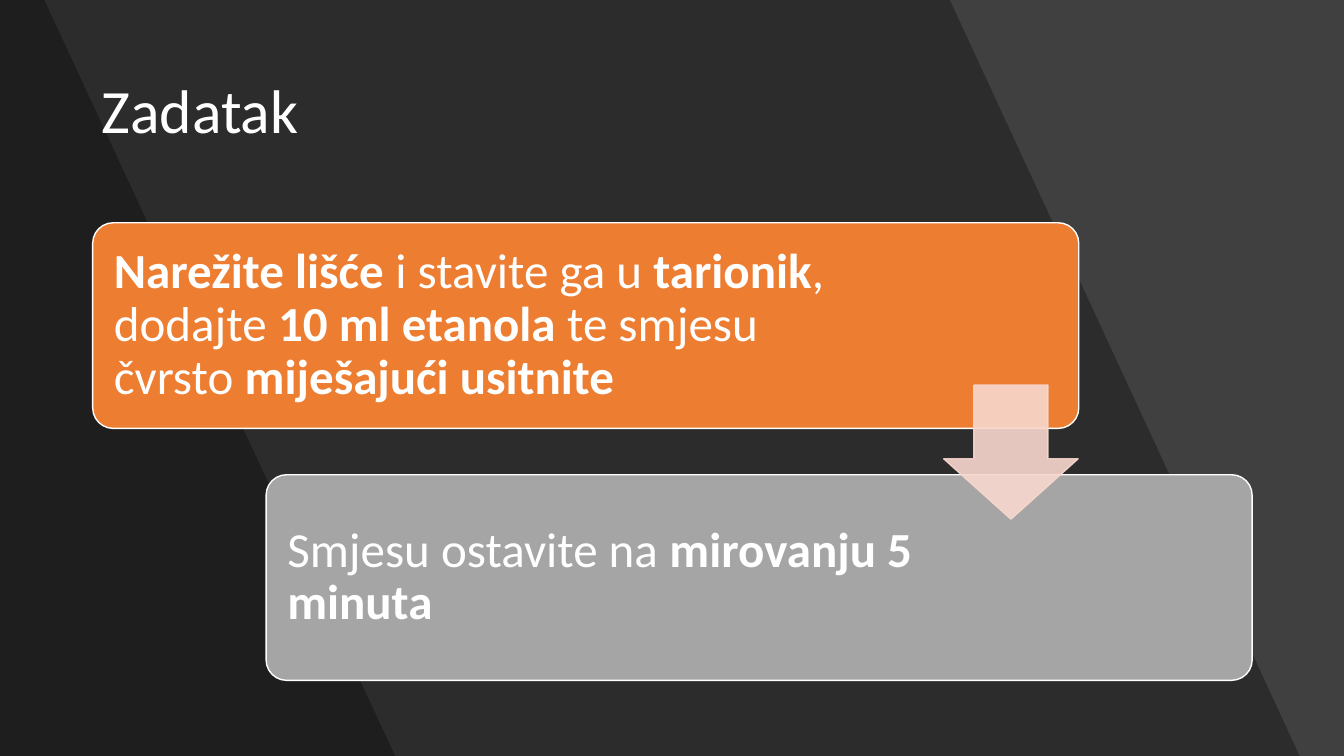
from lxml.etree import SubElement as Sub
from pptx import Presentation
from pptx.dml.color import RGBColor
from pptx.enum.shapes import MSO_SHAPE as Shape
from pptx.enum.text import MSO_ANCHOR as Anchor
from pptx.oxml.ns import qn
from pptx.util import Inches, Pt

WIDE, HIGH = Inches(13.33), Inches(7.5)
WHITE, BLACK, PINK = "FFFFFF", "000000", "F8D7CE"

# Each step: fill, width of its text, and runs as (words, bold)
STEPS = [
    ("ED7D31", 57.46, [
        ("Narežite lišće ", True), ("i stavite ga u ", False),
        ("tarionik", True), (", dodajte ", False),
        ("10 ml etanola ", True), ("te smjesu čvrsto ", False),
        ("miješajući usitnite", True)]),
    ("A5A5A5", 49.51, [
        ("Smjesu ostavite na ", False), ("mirovanju 5 minuta", True)]),
]


def across(share):
    """Percent of the slide's width."""
    return round(WIDE * share / 100)


def down(share):
    """Percent of the slide's height."""
    return round(HIGH * share / 100)


def place(x, y, w, h):
    return across(x), down(y), across(w), down(h)


def tint(fill, color, alpha=100):
    """Solid color, with an opacity in percent."""
    fill.solid()
    fill.fore_color.rgb = RGBColor.from_string(color)
    if alpha < 100:
        tone = fill.fore_color._xFill.find(qn("a:srgbClr"))
        Sub(tone, qn("a:alpha"), val=str(alpha * 1000))


def add_band(slide, top, foot):
    """Dark band from the left edge to a slanted side."""
    maker = slide.shapes.build_freeform(0, 0)
    maker.add_line_segments([(across(top), 0), (across(foot), HIGH), (0, HIGH)])
    band = maker.convert_to_shape()
    band.shadow.inherit = False
    tint(band.fill, BLACK, 30)
    band.line.fill.background()


def add_block(slide, kind, box, color, edge, adjust, alpha=100):
    block = slide.shapes.add_shape(kind, *place(*box))
    block.shadow.inherit = False
    for i, value in enumerate(adjust):
        block.adjustments[i] = value
    tint(block.fill, color, alpha)
    tint(block.line.fill, edge, alpha)
    block.line.width = Pt(1)


def add_text(slide, runs, box, size=35, color=WHITE, pad=None, after=0):
    frame = slide.shapes.add_textbox(*place(*box)).text_frame
    frame.word_wrap = True
    frame.vertical_anchor = Anchor.MIDDLE
    if pad is not None:
        frame.margin_left = frame.margin_right = Inches(pad)
        frame.margin_top = frame.margin_bottom = Inches(pad)
    para = frame.paragraphs[0]
    para.line_spacing = 0.9
    para.space_after = Pt(after)
    for words, bold in runs:
        run = para.add_run()
        run.text = words
        run.font.name = "Calibri"
        run.font.size = Pt(size)
        run.font.bold = bold
        tint(run.font.fill, color)


def add_step(slide, i, color, span, runs):
    """Card moved right and down by its number, with its text."""
    x, y, w, h = 6.9 + 12.9 * i, 29.47 + 33.33 * i, 73.37, 27.2
    add_block(slide, Shape.ROUNDED_RECTANGLE, (x, y, w, h), color, WHITE, [0.1])
    add_text(slide, runs, (x + 0.45, y + 0.8, span, h - 1.6), pad=0.15)


def main():
    deck = Presentation()
    deck.slide_width, deck.slide_height = WIDE, HIGH
    slide = deck.slides.add_slide(deck.slide_layouts[6])

    # Background with overlapping bands
    tint(slide.background.fill, "404040")
    add_band(slide, 70.67, 96.7)
    add_band(slide, 3.3, 29.4)

    # Title
    add_text(slide, [("Zadatak", False)], (6.83, 5.33, 86.35, 19.33), size=44)

    # Steps and the arrow between them
    for i, step in enumerate(STEPS):
        add_step(slide, i, *step)
    add_block(slide, Shape.DOWN_ARROW, (70.22, 50.93, 10, 17.75),
              PINK, PINK, [0.55, 0.45], alpha=90)

    deck.save("out.pptx")


if __name__ == "__main__":
    main()
